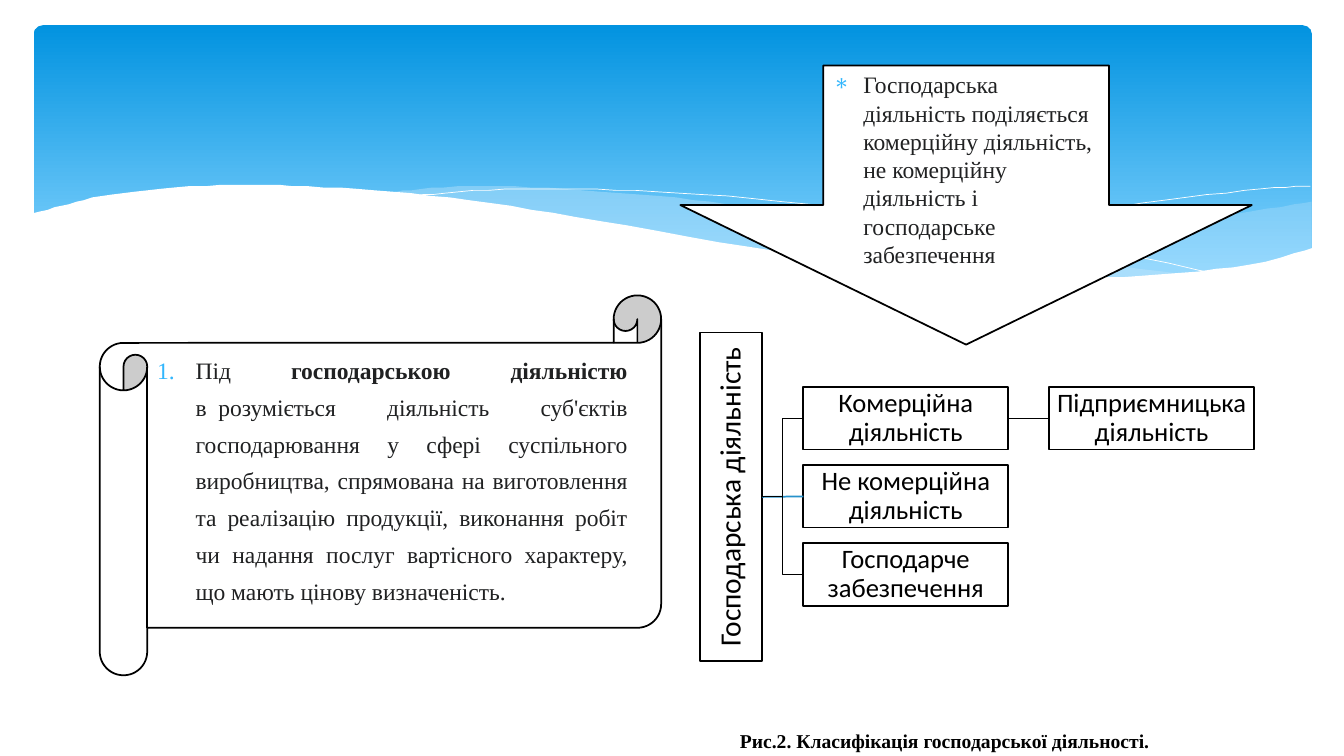
from lxml.etree import SubElement
from pptx import Presentation
from pptx.dml.color import RGBColor
from pptx.enum.shapes import MSO_CONNECTOR as CONN, MSO_SHAPE as SHAPE
from pptx.enum.text import MSO_ANCHOR as ANCHOR, PP_ALIGN as ALIGN
from pptx.oxml.ns import qn
from pptx.util import Pt

SERIF, SANS = "Times New Roman", "Calibri"
BLACK, WHITE, INK, BULLET = "000000", "FFFFFF", "202122", "31B6FD"
RIGHT, LEFT = 3, 1


def color(value):
    return RGBColor.from_string(value)


def smooth(knots, steps=5):
    """Points of a Catmull-Rom curve through the knots."""
    ends = [knots[0], *knots, knots[-1]]
    points = [knots[0]]
    for a, b, c, d in zip(ends, ends[1:], ends[2:], ends[3:]):
        for i in range(1, steps + 1):
            t = i / steps
            points.append(tuple(
                (2 * q + (r - p) * t + (2 * p - 5 * q + 4 * r - s) * t ** 2
                 + (3 * q - p - 3 * r + s) * t ** 3) / 2
                for p, q, r, s in zip(a, b, c, d)))
    return points


def write(sp, runs, size, font=SERIF, ink=INK, align=ALIGN.LEFT, anchor=ANCHOR.TOP,
          inset=None, spacing=None, before=None, indent=0, hanging=0, bullet=None):
    """Fill one paragraph with (text, bold) runs."""
    tf = sp.text_frame
    tf.word_wrap = True
    tf.vertical_anchor = anchor
    if inset is not None:
        tf.margin_left = tf.margin_right = tf.margin_top = tf.margin_bottom = Pt(inset)
    p = tf.paragraphs[0]
    p.alignment, p.line_spacing = align, spacing
    if before:
        p.space_before = Pt(before)
    for text, bold in runs:
        r = p.add_run()
        r.text = text
        r.font.size, r.font.name, r.font.bold = Pt(size), font, bold
        r.font.color.rgb = color(ink)
    pPr = p._p.get_or_add_pPr()
    pPr.set("marL", str(Pt(hanging)))
    pPr.set("indent", str(Pt(indent - hanging)))
    if bullet:
        tag, attrs = bullet
        SubElement(SubElement(pPr, qn("a:buClr")), qn("a:srgbClr"), val=BULLET)
        SubElement(pPr, qn(tag), **attrs)


class SlideBuilder:
    def __init__(self, slide, line_width=1.25):
        self.s = slide
        self.line_width = line_width

    def paint(self, sp, fill=None, line=None, width=None, alpha=None):
        sp.shadow.inherit = False
        if fill:
            sp.fill.solid()
            sp.fill.fore_color.rgb = color(fill)
            if alpha:
                clr = sp.fill._xPr.find(".//" + qn("a:srgbClr"))
                SubElement(clr, qn("a:alpha"), val=str(alpha * 1000))
        else:
            sp.fill.background()
        if line:
            sp.line.color.rgb = color(line)
            sp.line.width = Pt(width or self.line_width)
        else:
            sp.line.fill.background()
        return sp

    def shape(self, kind, x, y, w, h, fill=WHITE, line=BLACK):
        sp = self.s.shapes.add_shape(kind, Pt(x), Pt(y), Pt(w), Pt(h))
        return self.paint(sp, fill, line)

    def banner(self, x, y, w, h, top, bottom):
        sp = self.shape(SHAPE.ROUNDED_RECTANGLE, x, y, w, h, line=None)
        sp.adjustments[0] = 0.034
        sp.fill.gradient()
        sp.fill.gradient_angle = 270
        for stop, position, value in zip(sp.fill.gradient_stops, (0, 0.9), (top, bottom)):
            stop.position = position
            stop.color.rgb = color(value)

    def wave(self, points, closed=True, **style):
        builder = self.s.shapes.build_freeform(*points[0], scale=Pt(1))
        builder.add_line_segments(points[1:], close=closed)
        return self.paint(builder.convert_to_shape(), **style)

    def box(self, x, y, w, h, text, size=19, vertical=False):
        sp = self.shape(SHAPE.RECTANGLE, x, y, w, h)
        write(sp, [(text, False)], size, SANS, BLACK, ALIGN.CENTER, ANCHOR.MIDDLE,
              inset=0.72, spacing=0.9)
        if vertical:
            sp.text_frame._txBody.bodyPr.set("vert", "vert270")
        return sp

    def link(self, start, end, kind=CONN.STRAIGHT, line=BLACK, width=0.75):
        c = self.s.shapes.add_connector(kind, 0, 0, 0, 0)
        c.begin_connect(start, RIGHT)
        c.end_connect(end, LEFT)
        c.line.color.rgb = color(line)
        c.line.width = Pt(width)
        SubElement(c._element.spPr, qn("a:effectLst"))

    def caption(self, x, y, w, h, text):
        sp = self.s.shapes.add_textbox(Pt(x), Pt(y), Pt(w), Pt(h))
        write(sp, [(text, True)], 14, ink=BLACK, align=ALIGN.JUSTIFY,
              anchor=ANCHOR.MIDDLE, indent=35.4)


def main():
    prs = Presentation()
    prs.slide_width, prs.slide_height = Pt(960), Pt(540)
    b = SlideBuilder(prs.slides.add_slide(prs.slide_layouts[6]))

    # Banner with waves
    b.banner(24, 18, 913, 194.4, "0293E0", "83D3FE")
    b.wave(smooth([(937, 144), (894, 151), (826, 161), (747, 174), (677, 185), (635, 191)])
           + smooth([(635, 191), (677, 195), (738, 199), (801, 200), (852, 198),
                     (899, 191), (937, 178)]), fill="C6E7FC", alpha=29)
    b.wave(smooth([(857, 197), (775, 187), (678, 173), (604, 160), (533, 148), (470, 140),
                   (403, 135), (347, 133), (301, 135), (275, 138)])
           + smooth([(275, 138), (348, 146), (431, 160), (508, 173), (577, 184),
                     (653, 192), (730, 198), (795, 200), (857, 197)]),
           fill="C6E7FC", alpha=40)
    for knots in (
        [(297, 140), (338, 136), (400, 135), (469, 137), (558, 144), (668, 158),
         (763, 174), (871, 196)],
        [(589, 185), (667, 169), (745, 156), (832, 143), (900, 135), (936, 133)],
    ):
        b.wave(smooth(knots), closed=False, line=WHITE, width=0.5)
    b.wave(smooth([(938, 177), (893, 189), (829, 196), (762, 199), (698, 196), (621, 189),
                   (533, 176), (429, 158), (350, 145), (281, 137), (220, 133), (169, 132),
                   (114, 135), (73, 140), (44, 147), (22, 153)])
           + [(22, 237), (938, 237)], fill=WHITE)

    # Scroll with the definition
    scroll = b.shape(SHAPE.HORIZONTAL_SCROLL, 71.3, 211, 401, 271.4)
    write(scroll, [
        ("Під ", False),
        ("господарською діяльністю", True),
        (" в\u00a0\u00a0розуміється діяльність суб'єктів господарювання у сфері суспільного "
         "виробництва, спрямована на виготовлення та реалізацію продукції, виконання "
         "робіт чи надання послуг вартісного характеру, що мають цінову визначеність.", False),
    ], 16.8, align=ALIGN.JUSTIFY, spacing=1.3, before=3.4, hanging=27.4,
        bullet=("a:buAutoNum", {"type": "arabicPeriod"}))

    # Arrow with the division
    arrow = b.shape(SHAPE.DOWN_ARROW, 486, 46.8, 408.2, 199.4)
    write(arrow, [("Господарська діяльність поділяється комерційну діяльність, "
                   "не комерційну діяльність і господарське забезпечення", False)],
          16.8, before=3.4, hanging=21.6, bullet=("a:buChar", {"char": "∗"}))

    # Classification tree
    box_w, box_h, row_gap, col_gap = 146.4, 44.6, 11.2, 29.2
    kinds_x, kinds_y = 573.8, 276.5
    root = b.box(499.9, 237.6, box_h, 234.7, "Господарська діяльність", 21, vertical=True)
    commercial, noncommercial, support = [
        b.box(kinds_x, kinds_y + i * (box_h + row_gap), box_w, box_h, text)
        for i, text in enumerate(("Комерційна діяльність", "Не комерційна діяльність",
                                  "Господарче забезпечення"))]
    business = b.box(kinds_x + box_w + col_gap, kinds_y, box_w, box_h,
                     "Підприємницька діяльність")
    b.link(root, noncommercial, line="2792CB", width=1.25)
    b.link(root, commercial, CONN.ELBOW)
    b.link(root, support, CONN.ELBOW)
    b.link(commercial, business)

    # Caption
    b.caption(486, 517, 474, 24.5, "Рис.2. Класифікація господарської діяльності.")

    prs.save("out.pptx")


if __name__ == "__main__":
    main()
